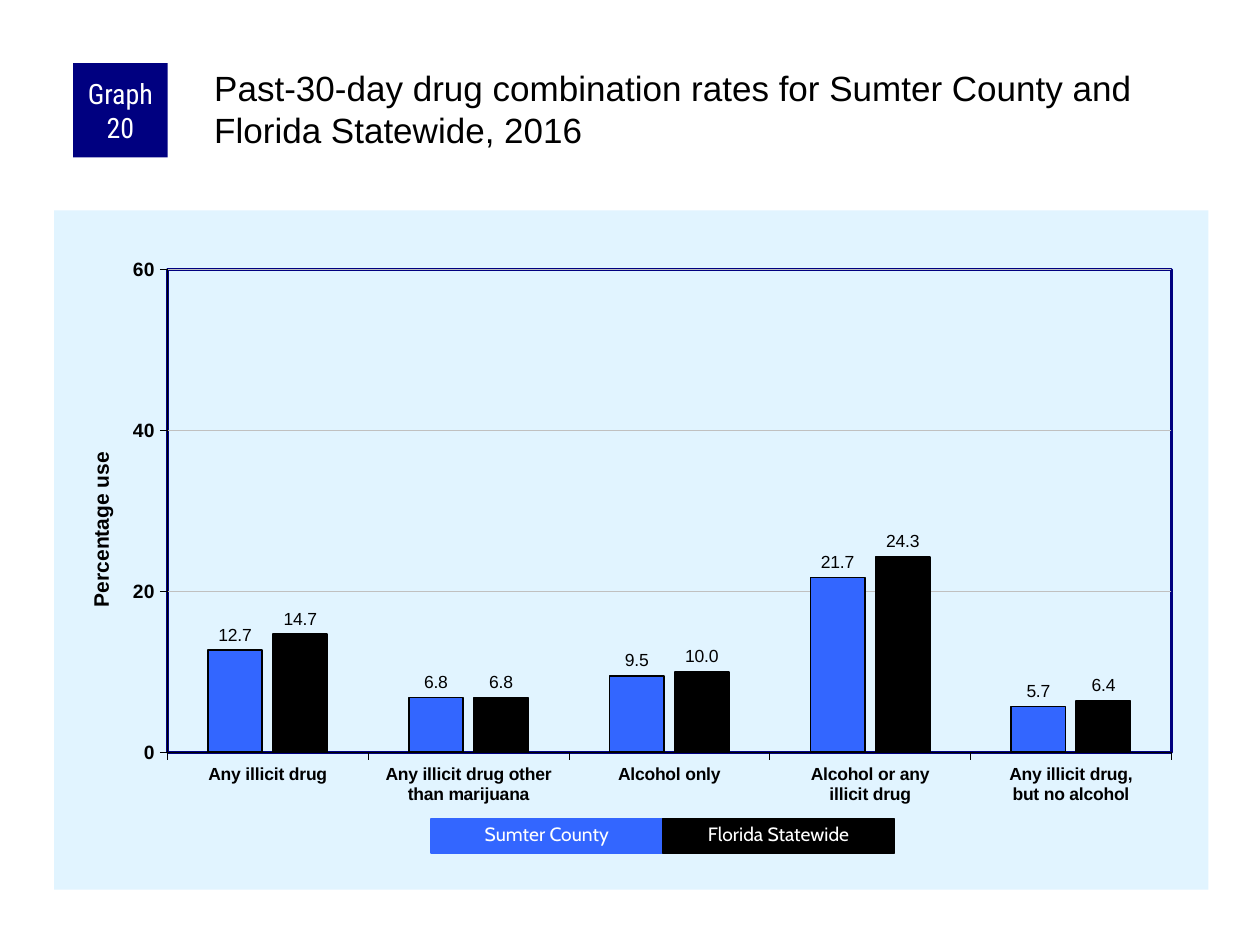
from dataclasses import dataclass

from lxml import etree
from pptx import Presentation
from pptx import util as u
from pptx.chart.data import CategoryChartData
from pptx.dml.color import RGBColor
from pptx.enum import chart as ch, shapes, text
from pptx.oxml import parse_xml
from pptx.oxml.ns import nsdecls, qn

WIDE, HIGH = 10, 7.5


@dataclass(frozen=True)
class Theme:
    navy: str = "000080"
    blue: str = "3366FF"
    black: str = "000000"
    white: str = "FFFFFF"
    pale: str = "E1F4FF"
    grey: str = "C0C0C0"
    font: str = "Arial"
    tag: str = "Roboto Condensed"
    key: str = "Cabin"
    head: int = 20
    badge: int = 16
    axis: int = 12
    tick: int = 11
    small: int = 10


T = Theme()
CATS = ["Any illicit drug", "Any illicit drug other than marijuana",
        "Alcohol only", "Alcohol or any\nillicit drug",
        "Any illicit drug,\nbut no alcohol"]
SERIES = [("Sumter County", T.blue, [12.7, 6.8, 9.5, 21.7, 5.7]),
          ("Florida Statewide", T.black, [14.7, 6.8, 10.0, 24.3, 6.4])]


def box(x, y, w, h):
    return [u.Inches(v) for v in (x, y, w, h)]


def style(font, name, size, color, bold=False):
    font.name, font.size, font.bold = name, u.Pt(size), bold
    font.color.rgb = RGBColor.from_string(color)


def paint(fill, color):
    fill.solid()
    fill.fore_color.rgb = RGBColor.from_string(color)


def stroke(line, color, width):
    paint(line.fill, color)
    line.width = u.Pt(width)


def write(frame, words, name, size, color, align):
    para = frame.paragraphs[0]
    para.alignment = align
    run = para.add_run()
    run.text = words
    style(run.font, name, size, color)
    return para


def inset(frame, left, top, right, low):
    frame.margin_left, frame.margin_top = u.Inches(left), u.Inches(top)
    frame.margin_right, frame.margin_bottom = u.Inches(right), u.Inches(low)


def block(slide, area, fill):
    shape = slide.shapes.add_shape(shapes.MSO_SHAPE.RECTANGLE, *box(*area))
    shape.shadow.inherit = False
    paint(shape.fill, fill)
    shape.line.fill.background()
    shape.text_frame.word_wrap = True
    return shape


def add_title(slide, words):
    title = slide.shapes.title
    title.left, title.top, title.width, title.height = box(1.67, 0.5, 7.92, 0.83)
    frame = title.text_frame
    frame.word_wrap = True
    frame.auto_size = text.MSO_AUTO_SIZE.NONE
    frame.vertical_anchor = text.MSO_ANCHOR.TOP
    inset(frame, 0.03, 0.03, 0, 0)
    write(frame, words, T.font, T.head, T.black, text.PP_ALIGN.LEFT)


def add_badge(slide, words):
    frame = block(slide, (0.58, 0.5, 0.75, 0.75), T.navy).text_frame
    frame.vertical_anchor = text.MSO_ANCHOR.MIDDLE
    inset(frame, 0.05, 0, 0.05, 0)
    write(frame, words, T.tag, T.badge, T.white, text.PP_ALIGN.CENTER)


def add_keys(slide):
    wide = 1.84
    for i, (name, color, _) in enumerate(SERIES):
        shape = block(slide, (3.42 + i * wide, 6.5, wide, 0.27), color)
        stroke(shape.line, color, 0.75)
        frame = shape.text_frame
        frame.vertical_anchor = text.MSO_ANCHOR.TOP
        frame.auto_size = text.MSO_AUTO_SIZE.SHAPE_TO_FIT_TEXT
        para = write(frame, name, T.key, T.tick, T.white, text.PP_ALIGN.CENTER)
        para.line_spacing = 0.9


def place(node, index, **parts):
    """Give a chart part a fixed layout, in shares of the chart's size."""
    for old in node.findall(qn("c:layout")):
        node.remove(old)
    layout = parse_xml(f"<c:layout {nsdecls('c')}><c:manualLayout/></c:layout>")
    for tag, val in parts.items():
        etree.SubElement(layout[0], qn("c:" + tag)).set("val", str(val))
    node.insert(index, layout)


def surface(fill, line):
    return parse_xml(f"<c:spPr {nsdecls('c', 'a')}>{fill}{line}</c:spPr>")


def solid(color):
    return f'<a:solidFill><a:srgbClr val="{color}"/></a:solidFill>'


def frame_chart(chart):
    """Fill the chart's ground, and outline and place its plot."""
    root = chart._chartSpace
    plot = root.chart.plotArea
    place(plot, 0, layoutTarget="inner", xMode="edge", yMode="edge",
          x=0.098, y=0.087, w=0.87, h=0.711)
    plot.append(surface("<a:noFill/>", f'<a:ln w="19050">{solid(T.navy)}</a:ln>'))
    root.chart.addnext(surface(solid(T.pale), "<a:ln><a:noFill/></a:ln>"))


def set_axes(chart):
    cat, val = chart.category_axis, chart.value_axis
    for axis, size in ((cat, T.small), (val, T.tick)):
        style(axis.tick_labels.font, T.font, size, T.black, True)
        stroke(axis.format.line, T.black, 0.25)
        axis.major_tick_mark = ch.XL_TICK_MARK.OUTSIDE
        axis.minor_tick_mark = ch.XL_TICK_MARK.NONE
    val.minimum_scale, val.maximum_scale, val.major_unit = 0, 60, 20
    val.tick_labels.number_format = "0"
    val.tick_labels.number_format_is_linked = False
    stroke(val.major_gridlines.format.line, T.grey, 0.25)
    title = val.axis_title
    run = title.text_frame.paragraphs[0].add_run()
    run.text = "Percentage use"
    style(run.font, T.font, T.axis, T.black, True)
    node = title._element
    node.find(".//" + qn("a:bodyPr")).set("rot", "-5400000")
    place(node, 1, xMode="edge", yMode="edge", x=0.026, y=0.35)


def add_bars(slide):
    data = CategoryChartData(number_format="0.0")
    data.categories = CATS
    for name, _, vals in SERIES:
        data.add_series(name, vals)
    chart = slide.shapes.add_chart(ch.XL_CHART_TYPE.COLUMN_CLUSTERED,
                                   *box(0.43, 1.67, 9.16, 5.39), data).chart
    chart.has_legend = chart.has_title = False
    style(chart.font, T.font, 11.5, T.black)
    plot = chart.plots[0]
    plot.gap_width, plot.overlap = 150, -20
    plot.vary_by_categories = False
    for series, (_, color, _) in zip(plot.series, SERIES):
        paint(series.format.fill, color)
        stroke(series.format.line, T.black, 1)
        labels = series.data_labels
        labels.show_value = True
        labels.number_format, labels.number_format_is_linked = "0.0", False
        labels.position = ch.XL_LABEL_POSITION.OUTSIDE_END
        style(labels.font, T.font, T.small, T.black)
    set_axes(chart)
    frame_chart(chart)


def main():
    deck = Presentation()
    deck.slide_width, deck.slide_height = u.Inches(WIDE), u.Inches(HIGH)
    slide = deck.slides.add_slide(deck.slide_layouts[5])
    add_bars(slide)
    add_badge(slide, "Graph 20")
    add_title(slide, "Past-30-day drug combination rates for Sumter County "
                     "and Florida Statewide, 2016")
    add_keys(slide)
    deck.save("out.pptx")


if __name__ == "__main__":
    main()
